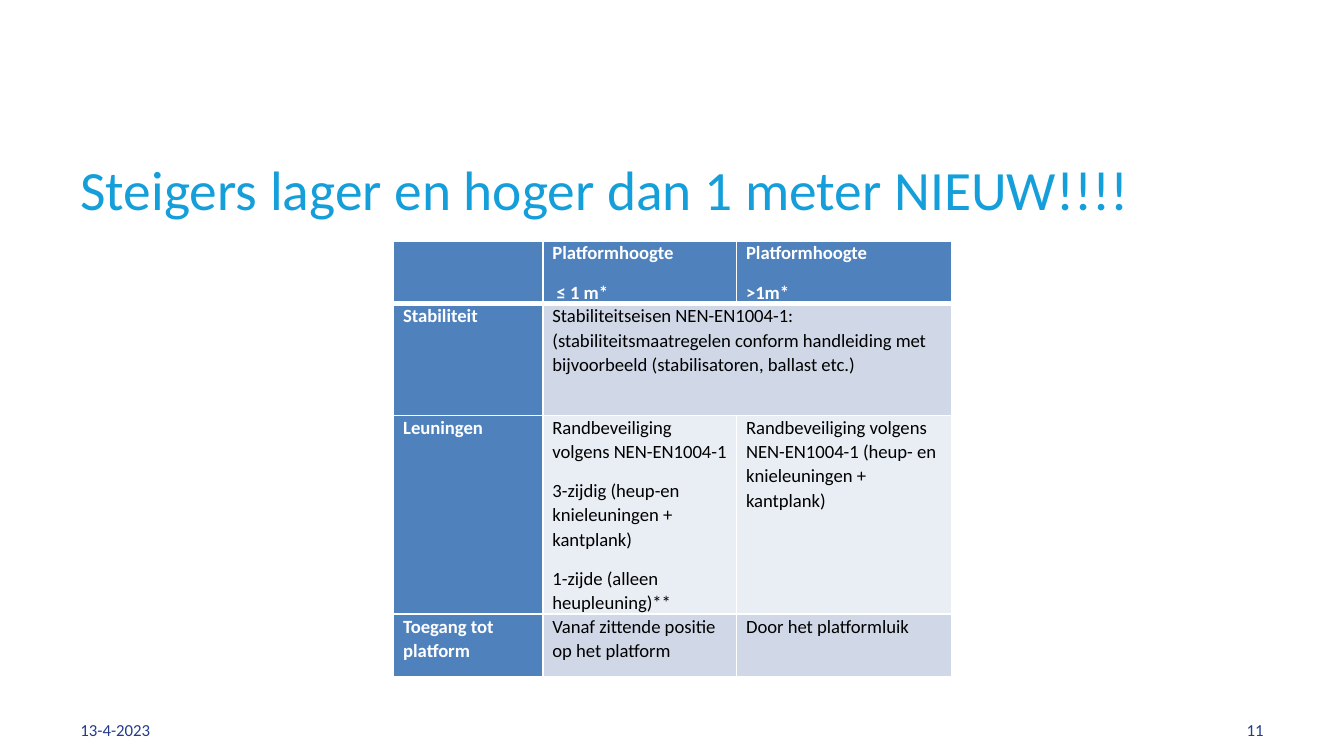
from lxml.etree import SubElement
from pptx import Presentation
from pptx.dml.color import RGBColor
from pptx.enum.text import MSO_ANCHOR, PP_ALIGN
from pptx.oxml.ns import qn
from pptx.util import Cm, Pt

COLORS = {
    "title": "149FDB",
    "footer": "243B8B",
    "heading": "4F81BD",
    "band": "D0D8E8",
    "light": "E9EDF4",
    "white": "FFFFFF",
    "black": "000000",
}
FONT = "Calibri"
COLUMN_WIDTHS = [2.82, 3.66, 4.06]
ROW_HEIGHTS = [1.19, 2.11, 3.76, 1.19]
ROW_FILLS = ["heading", "band", "light", "band"]
# Each cell is a list of paragraphs.
ROWS = [
    [[], ["Platformhoogte", " ≤ 1 m*"], ["Platformhoogte", ">1m*"]],
    [
        ["Stabiliteit"],
        ["Stabiliteitseisen NEN-EN1004-1: (stabiliteitsmaatregelen conform "
         "handleiding met bijvoorbeeld (stabilisatoren, ballast etc.)"],
        [],
    ],
    [
        ["Leuningen"],
        ["Randbeveiliging volgens NEN-EN1004-1",
         "3-zijdig (heup-en knieleuningen + kantplank)",
         "1-zijde (alleen heupleuning)**"],
        ["Randbeveiliging volgens NEN-EN1004-1 (heup- en knieleuningen + kantplank)"],
    ],
    [
        ["Toegang tot platform"],
        ["Vanaf zittende positie op het platform"],
        ["Door het platformluik"],
    ],
]


def add_run(paragraph, text, size, color, bold=False):
    run = paragraph.add_run()
    run.text = text
    run.font.name = FONT
    run.font.size = Pt(size)
    run.font.bold = bold
    run.font.color.rgb = RGBColor.from_string(COLORS[color])


def add_label(slide, text, left, top, width, height, size, color,
              anchor=MSO_ANCHOR.BOTTOM, align=PP_ALIGN.LEFT):
    frame = slide.shapes.add_textbox(
        Cm(left), Cm(top), Cm(width), Cm(height)).text_frame
    frame.word_wrap = True
    frame.vertical_anchor = anchor
    frame.margin_top = Cm(0.13)
    frame.margin_bottom = 0
    paragraph = frame.paragraphs[0]
    paragraph.alignment = align
    add_run(paragraph, text, size, color)


def set_borders(cell, bottom_width):
    """Draw white cell borders; they must precede the fill in the XML."""
    properties = cell._tc.get_or_add_tcPr()
    widths = {"a:lnL": 1, "a:lnR": 1, "a:lnT": 1, "a:lnB": bottom_width}
    for side, width in widths.items():
        line = SubElement(properties, qn(side), w=str(Pt(width)))
        fill = SubElement(line, qn("a:solidFill"))
        SubElement(fill, qn("a:srgbClr"), val=COLORS["white"])


def fill_cell(cell, paragraphs, fill, is_heading, bottom_width):
    set_borders(cell, bottom_width)
    cell.fill.solid()
    cell.fill.fore_color.rgb = RGBColor.from_string(COLORS[fill])
    cell.margin_left = cell.margin_right = Cm(0.18)
    cell.margin_top = cell.margin_bottom = 0
    frame = cell.text_frame
    for index, text in enumerate(paragraphs):
        paragraph = frame.add_paragraph() if index else frame.paragraphs[0]
        paragraph.line_spacing = 1.07
        paragraph.space_after = Pt(8)
        add_run(paragraph, text, 10, "white" if is_heading else "black", is_heading)


def add_requirements_table(slide):
    table = slide.shapes.add_table(
        len(ROWS), len(COLUMN_WIDTHS), Cm(7.44), Cm(4.55),
        Cm(sum(COLUMN_WIDTHS)), Cm(sum(ROW_HEIGHTS))).table
    for column, width in zip(table.columns, COLUMN_WIDTHS):
        column.width = Cm(width)
    for row, height in zip(table.rows, ROW_HEIGHTS):
        row.height = Cm(height)
    for r, (row, row_fill) in enumerate(zip(ROWS, ROW_FILLS)):
        for c, paragraphs in enumerate(row):
            is_heading = r == 0 or c == 0
            fill = "heading" if is_heading else row_fill
            fill_cell(table.cell(r, c), paragraphs, fill, is_heading,
                      bottom_width=3 if r == 0 else 1)
    table.cell(1, 1).merge(table.cell(1, 2))


def main():
    presentation = Presentation()
    presentation.slide_width = Cm(25.4)
    presentation.slide_height = Cm(14.29)
    slide = presentation.slides.add_slide(presentation.slide_layouts[6])
    add_label(slide, "Steigers lager en hoger dan 1 meter NIEUW!!!!",
              1.27, 2.74, 22.86, 1.52, 29.7, "title", MSO_ANCHOR.MIDDLE)
    add_requirements_table(slide)
    add_label(slide, "13-4-2023", 1.27, 13.23, 5.92, 0.76, 9, "footer")
    add_label(slide, "11", 18.21, 13.23, 5.92, 0.76, 9, "footer",
              align=PP_ALIGN.RIGHT)
    presentation.save("out.pptx")


if __name__ == "__main__":
    main()
